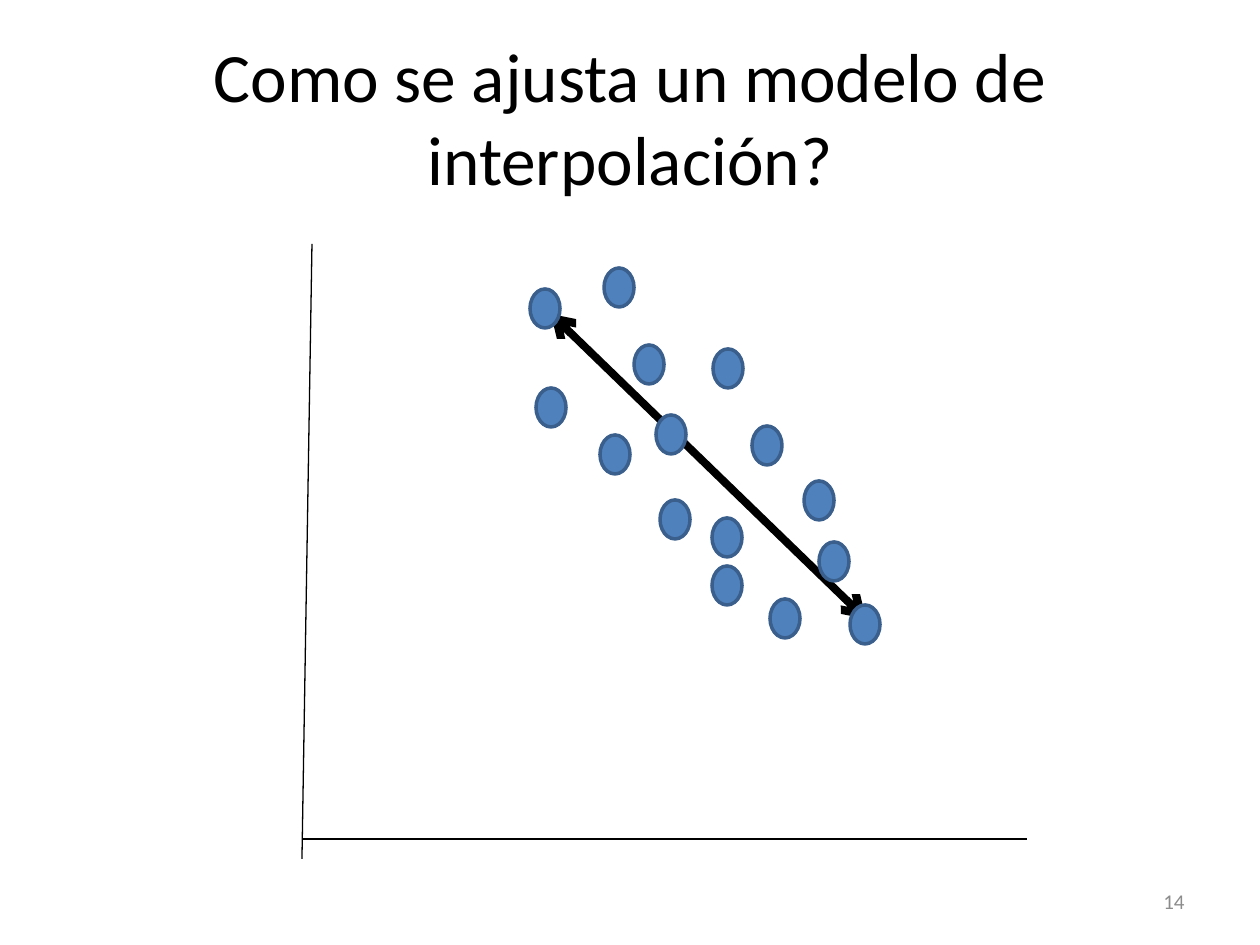
from dataclasses import dataclass

from lxml import etree
from pptx import Presentation
from pptx.dml.color import RGBColor
from pptx.enum.shapes import MSO_CONNECTOR, MSO_SHAPE
from pptx.enum.text import MSO_ANCHOR, PP_ALIGN
from pptx.oxml.ns import qn
from pptx.util import Pt

STRAIGHT = MSO_CONNECTOR.STRAIGHT
OVAL = MSO_SHAPE.OVAL
MIDDLE = MSO_ANCHOR.MIDDLE
CENTER, RIGHT = PP_ALIGN.CENTER, PP_ALIGN.RIGHT


@dataclass(frozen=True)
class Theme:
    font: str = "Calibri"
    ink: str = "000000"
    muted: str = "8C8C8C"
    dot: str = "4F81BD"
    dot_edge: str = "3A5F8C"
    title_size: float = 39.6
    number_size: float = 12
    axis_width: float = 0.75
    fit_width: float = 4.5
    edge_width: float = 2


THEME = Theme()
SLIDE_SIZE = (1260, 945)
EMU_PER_PX = 914400 / 126

TITLE = "Como se ajusta un modelo de interpolación?"
TITLE_BOX = (63, 38, 1134, 157)
NUMBER = "14"
NUMBER_BOX = (903, 876, 294, 50)

AXES = [
    ((312, 244), (302, 859)),
    ((1027, 839), (302, 839)),
]
FIT_LINE = ((551, 314), (866, 619))
DOT_SIZE = (30, 39)
DOTS = [
    (530, 289), (850, 605), (604, 268), (634, 345), (600, 435),
    (713, 349), (536, 388), (656, 415), (660, 500), (712, 566),
    (752, 426), (804, 481), (712, 518), (770, 599), (819, 542),
]


def px(*values):
    return [round(v * EMU_PER_PX) for v in values]


def rgb(color):
    return RGBColor.from_string(color)


def place(sp, box):
    sp.left, sp.top, sp.width, sp.height = px(*box)


def write(sp, text, *, size, color, align):
    tf = sp.text_frame
    tf.word_wrap = True
    tf.vertical_anchor = MIDDLE
    p = tf.paragraphs[0]
    p.alignment = align
    r = p.add_run()
    r.text = text
    r.font.name = THEME.font
    r.font.size = Pt(size)
    r.font.color.rgb = rgb(color)


def add_line(slide, start, end, width, arrows=False):
    sp = slide.shapes.add_connector(STRAIGHT, *px(*start, *end))
    sp.line.color.rgb = rgb(THEME.ink)
    sp.line.width = Pt(width)
    sp_pr = sp._element.spPr
    if arrows:
        for tag in ("a:headEnd", "a:tailEnd"):
            etree.SubElement(sp_pr.find(qn("a:ln")), qn(tag), type="arrow")
    etree.SubElement(sp_pr, qn("a:effectLst"))


def add_dot(slide, left, top):
    sp = slide.shapes.add_shape(OVAL, *px(left, top, *DOT_SIZE))
    sp.shadow.inherit = False
    sp.fill.solid()
    sp.fill.fore_color.rgb = rgb(THEME.dot)
    sp.line.color.rgb = rgb(THEME.dot_edge)
    sp.line.width = Pt(THEME.edge_width)


def main():
    prs = Presentation()
    prs.slide_width, prs.slide_height = px(*SLIDE_SIZE)
    slide = prs.slides.add_slide(prs.slide_layouts[5])

    title = slide.shapes.title
    place(title, TITLE_BOX)
    write(title, TITLE, size=THEME.title_size, color=THEME.ink, align=CENTER)

    for start, end in AXES:
        add_line(slide, start, end, THEME.axis_width)
    add_line(slide, *FIT_LINE, THEME.fit_width, arrows=True)
    for left, top in DOTS:
        add_dot(slide, left, top)

    number = slide.shapes.add_textbox(*px(*NUMBER_BOX))
    write(number, NUMBER, size=THEME.number_size, color=THEME.muted, align=RIGHT)

    prs.save("out.pptx")


if __name__ == "__main__":
    main()
